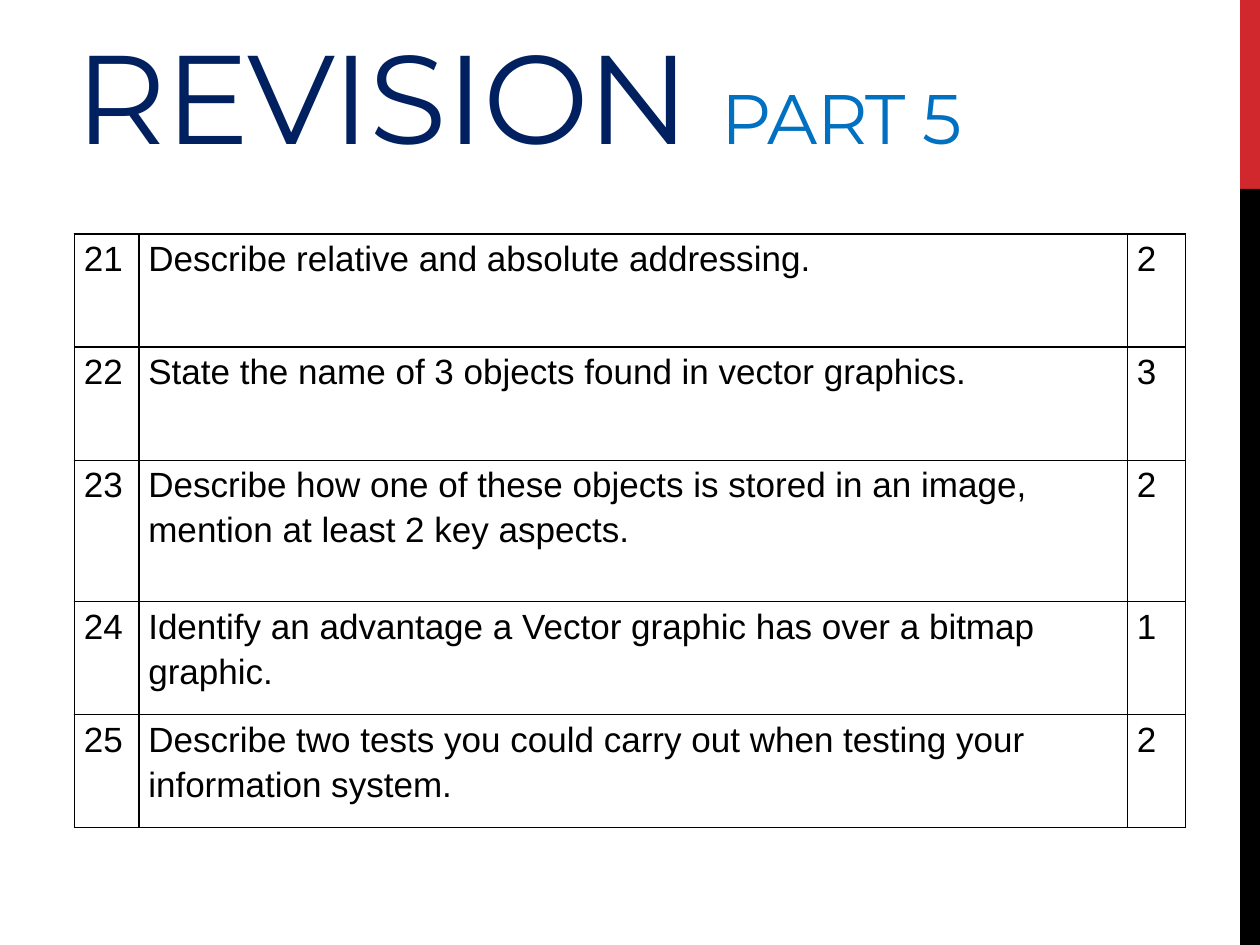
from lxml import etree
from pptx import Presentation
from pptx import util as u
from pptx.dml import color
from pptx.enum import shapes, text
from pptx.oxml import ns

ROWS = [
    ("21", "Describe relative and absolute addressing.", "2"),
    ("22", "State the name of 3 objects found in vector graphics.", "3"),
    ("23", "Describe how one of these objects is stored in an image, "
           "mention at least 2 key aspects.", "2"),
    ("24", "Identify an advantage a Vector graphic has over a bitmap graphic.", "1"),
    ("25", "Describe two tests you could carry out when testing your "
           "information system.", "2"),
]
WIDTHS = [1.3, 19.93, 1.17]
HEIGHTS = [2.28, 2.28, 2.85, 2.28, 2.28]


def paint(code):
    return color.RGBColor.from_string(code)


class Page:
    head = "Montserrat"
    body = "Arial"
    ink = "000000"

    def __init__(self, slide):
        self.slide = slide

    def style(self, run, font, size, code):
        run.font.name = font
        run.font.size = u.Pt(size)
        run.font.color.rgb = paint(code)

    def bar(self, left, top, width, height, code):
        box = self.slide.shapes.add_shape(
            shapes.MSO_SHAPE.RECTANGLE, *map(u.Cm, (left, top, width, height)))
        box.shadow.inherit = False
        box.fill.solid()
        box.fill.fore_color.rgb = paint(code)
        box.line.fill.background()

    def title(self, left, top, width, height, parts):
        box = self.slide.shapes.add_textbox(*map(u.Cm, (left, top, width, height)))
        frame = box.text_frame
        frame.word_wrap = True
        frame.vertical_anchor = text.MSO_ANCHOR.BOTTOM
        frame.margin_bottom = 0
        for words, size, code in parts:
            run = frame.paragraphs[0].add_run()
            run.text = words
            self.style(run, self.head, size, code)
            run.font._element.set("spc", "-60")

    def border(self, cell):
        props = cell._tc.get_or_add_tcPr()
        for spot, side in enumerate(("lnL", "lnR", "lnT", "lnB")):
            line = etree.Element(ns.qn("a:" + side), w=str(u.Pt(1)))
            fill = etree.SubElement(line, ns.qn("a:solidFill"))
            etree.SubElement(fill, ns.qn("a:srgbClr"), val=self.ink)
            props.insert(spot, line)

    def cell(self, cell, words):
        cell.margin_left = cell.margin_right = u.Cm(0.19)
        cell.margin_top = cell.margin_bottom = 0
        cell.fill.background()
        self.border(cell)
        cell.text_frame.text = words
        para = cell.text_frame.paragraphs[0]
        para.line_spacing = 1.15
        self.style(para.runs[0], self.body, 20, self.ink)

    def table(self, left, top, widths, heights, rows):
        size = map(u.Cm, (left, top, sum(widths), sum(heights)))
        grid = self.slide.shapes.add_table(len(rows), len(widths), *size).table
        grid.first_row = grid.horz_banding = False
        for col, width in zip(grid.columns, widths):
            col.width = u.Cm(width)
        for row, height, line in zip(grid.rows, heights, rows):
            row.height = u.Cm(height)
            for cell, words in zip(row.cells, line):
                self.cell(cell, words)


def main():
    deck = Presentation()
    deck.slide_width = u.Cm(25.4)
    deck.slide_height = u.Cm(19.05)
    page = Page(deck.slides.add_slide(deck.slide_layouts[6]))
    page.bar(25, 0, 0.4, 3.81, "D1282E")
    page.bar(25, 3.81, 0.4, 15.24, "000000")
    page.title(1.27, 0.13, 21.82, 3.3,
               [("REVISION ", 72, "002060"), ("PART 5", 40, "0070C0")])
    page.table(1.5, 4.72, WIDTHS, HEIGHTS, ROWS)
    deck.save("out.pptx")


if __name__ == "__main__":
    main()
